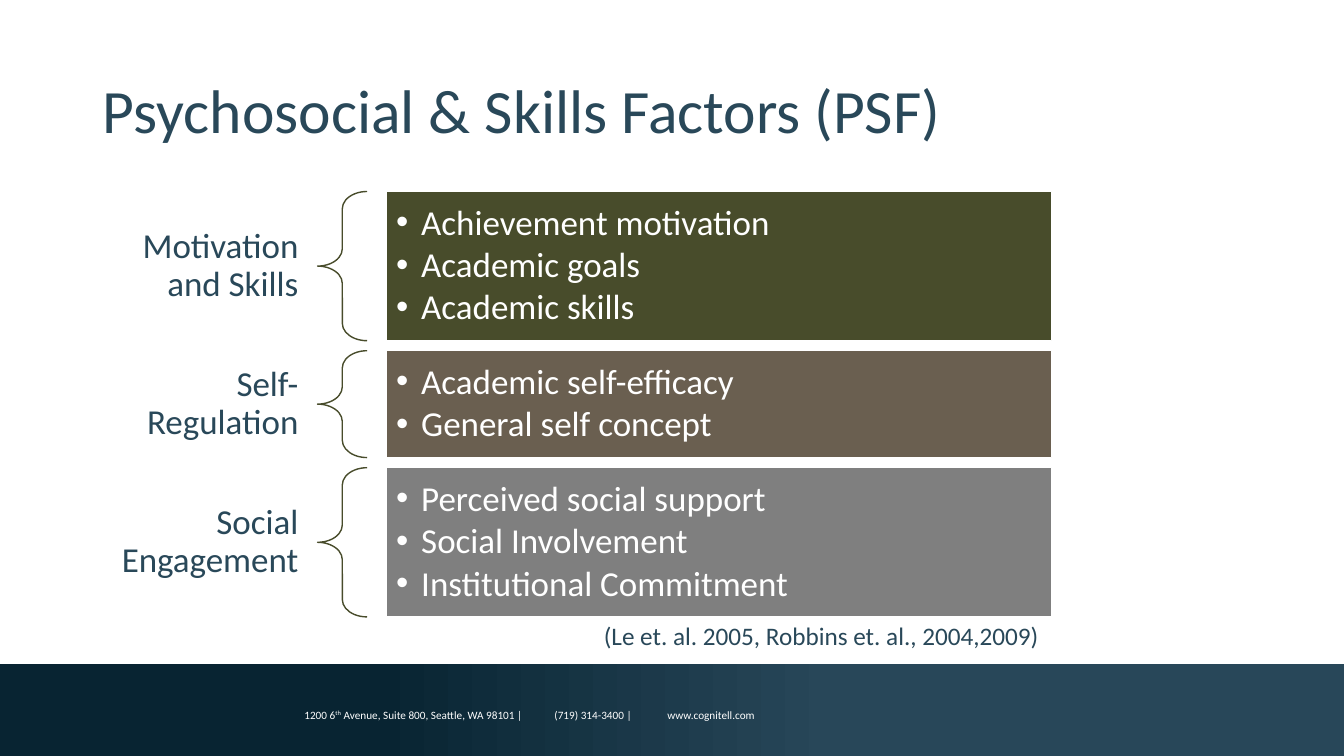
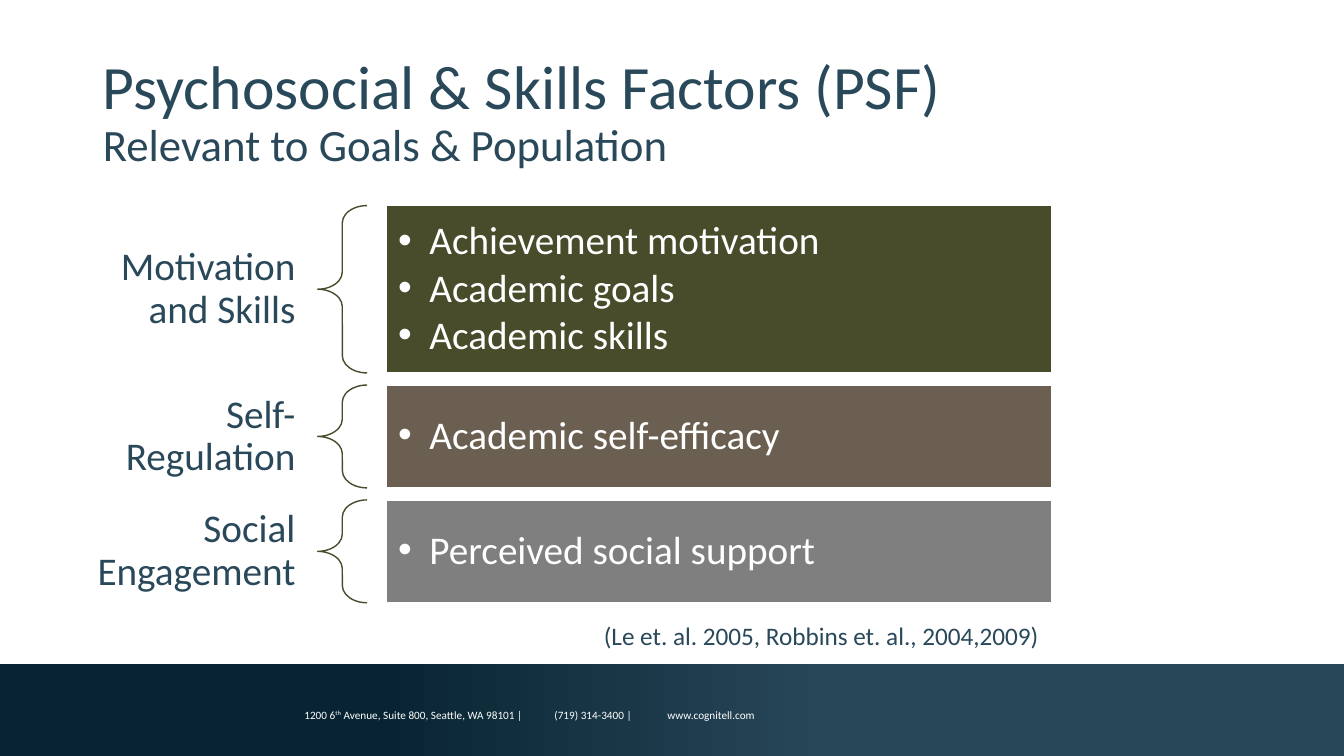
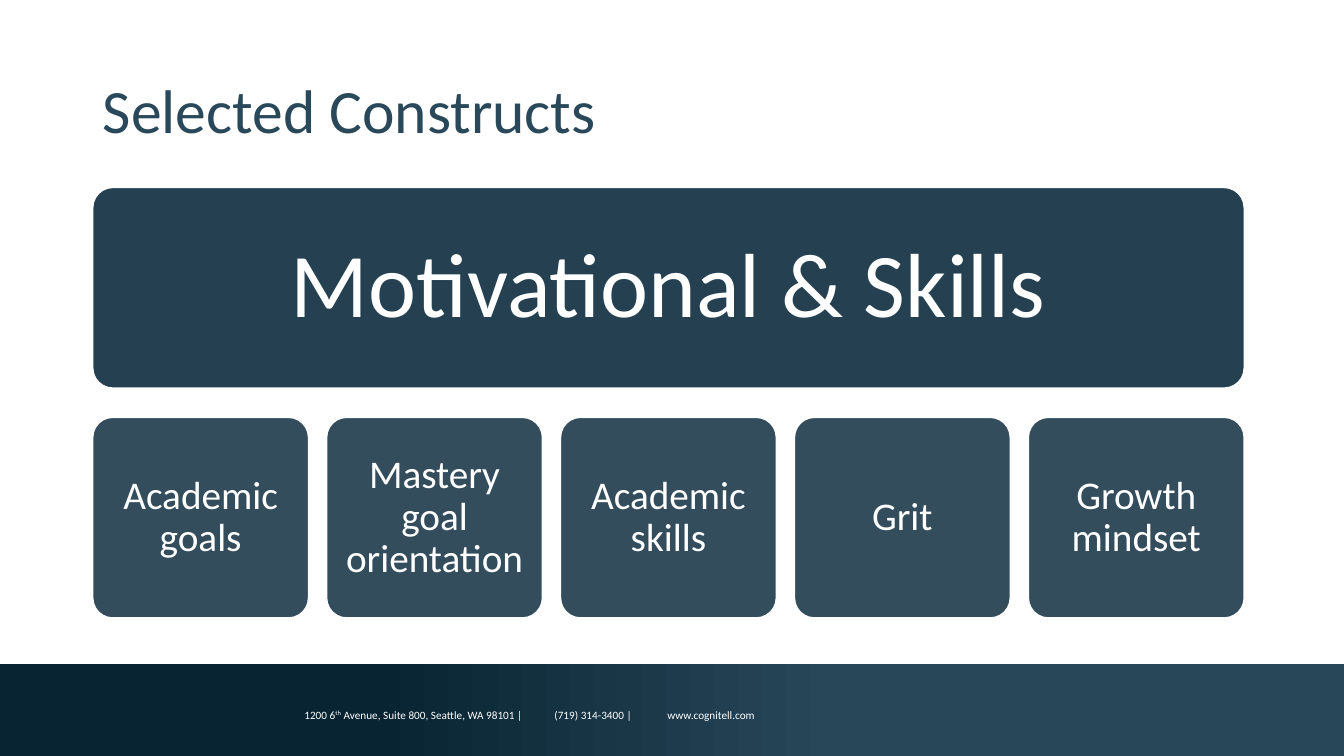
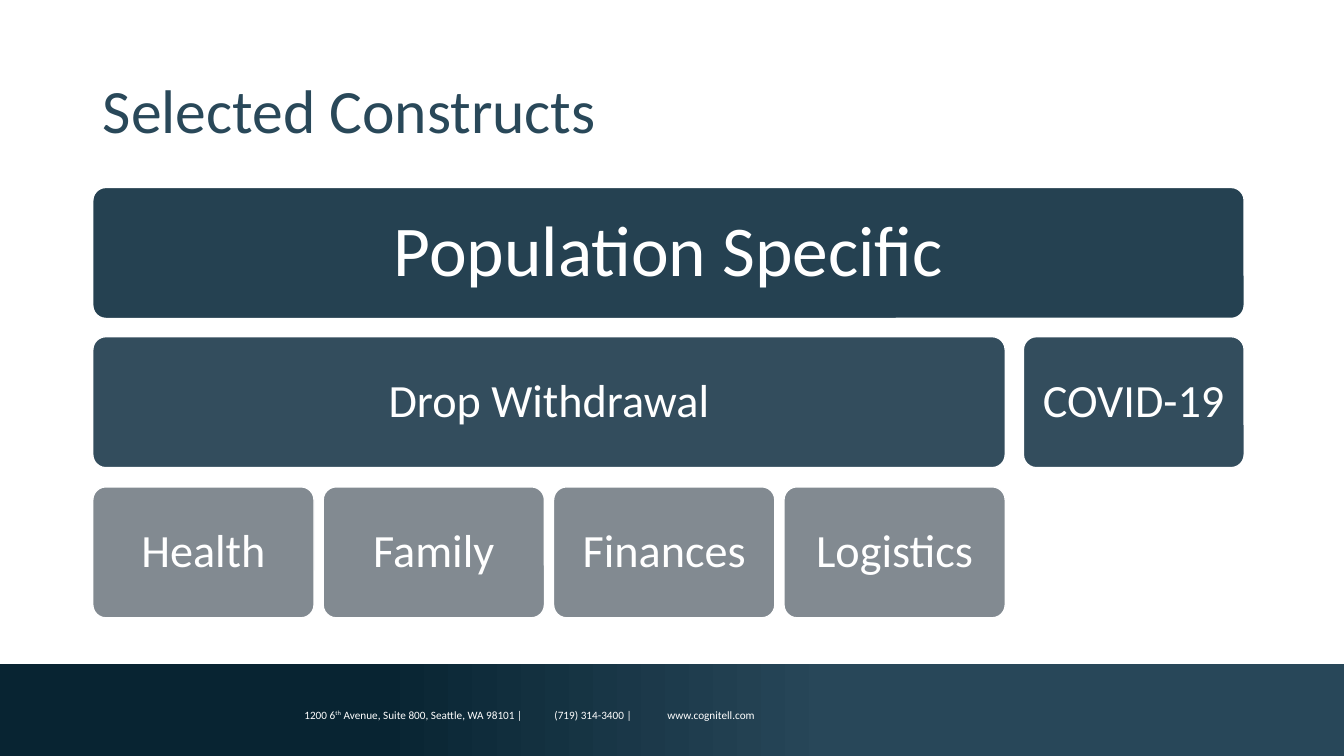
from dataclasses import dataclass

from lxml import etree
from pptx import Presentation
from pptx.dml.color import RGBColor
from pptx.enum.shapes import MSO_SHAPE
from pptx.enum.text import MSO_ANCHOR, MSO_AUTO_SIZE, PP_ALIGN
from pptx.oxml.ns import qn
from pptx.util import Pt

EMU_PER_PX = 9144  # 100 px to the inch
FONT = "Calibri"

WHITE, INK = "FFFFFF", "294859"
OLIVE, BROWN, GREY = "484C2B", "6A5F50", "7F7F7F"
BAND_DARK, BAND_LIGHT = "082432", "284759"
CARD_TOP, CARD_MIDDLE, CARD_LOW = "254151", "334D5D", "828A91"

LEFT, CENTER, RIGHT = PP_ALIGN.LEFT, PP_ALIGN.CENTER, PP_ALIGN.RIGHT
TOP, MIDDLE = MSO_ANCHOR.TOP, MSO_ANCHOR.MIDDLE
NO_AUTOSIZE = MSO_AUTO_SIZE.NONE
RECTANGLE, ROUNDED = MSO_SHAPE.RECTANGLE, MSO_SHAPE.ROUNDED_RECTANGLE
BRACE = MSO_SHAPE.LEFT_BRACE

CONTENT_LEFT, CONTENT_WIDTH = 92, 1142
CITATION = "(Le et. al. 2005, Robbins et. al., 2004,2009)"


@dataclass(frozen=True)
class Box:
    left: float
    top: float
    width: float
    height: float

    def emu(self) -> tuple[int, ...]:
        return tuple(px(v) for v in (self.left, self.top, self.width, self.height))


@dataclass(frozen=True)
class TextStyle:
    size: int
    color: str = WHITE
    align: PP_ALIGN = LEFT
    anchor: MSO_ANCHOR = MIDDLE
    inset_x: int = 10
    inset_y: int = 5
    line_spacing: float = 0.9


@dataclass(frozen=True)
class FactorGroup:
    label: str
    factors: list[str]
    fill: str
    height: int


@dataclass(frozen=True)
class FactorLayout:
    top: int
    gap: int
    bullet_indent: int
    label_style: TextStyle
    factor_style: TextStyle


def px(length: float) -> int:
    return round(length * EMU_PER_PX)


def rgb(color: str) -> RGBColor:
    return RGBColor.from_string(color)


def write_text(shape, lines: list[str], style: TextStyle) -> None:
    """Fill a shape with one paragraph per line, all in one style."""
    frame = shape.text_frame
    frame.text = "\n".join(lines)
    frame.word_wrap = True
    frame.auto_size = NO_AUTOSIZE
    frame.vertical_anchor = style.anchor
    frame.margin_left = frame.margin_right = px(style.inset_x)
    frame.margin_top = frame.margin_bottom = px(style.inset_y)
    for paragraph in frame.paragraphs:
        paragraph.alignment = style.align
        paragraph.line_spacing = style.line_spacing
        for run in paragraph.runs:
            run.font.name = FONT
            run.font.size = Pt(style.size)
            run.font.color.rgb = rgb(style.color)


def add_text(slide, box: Box, text: str, style: TextStyle):
    shape = slide.shapes.add_textbox(*box.emu())
    write_text(shape, [text], style)
    return shape


def add_shape(slide, kind: MSO_SHAPE, box: Box, fill: str | None, line: str | None):
    shape = slide.shapes.add_shape(kind, *box.emu())
    shape.shadow.inherit = False
    if fill:
        shape.fill.solid()
        shape.fill.fore_color.rgb = rgb(fill)
    else:
        shape.fill.background()
    if line:
        shape.line.color.rgb = rgb(line)
        shape.line.width = Pt(1)
    else:
        shape.line.fill.background()
    return shape


def add_bullets(shape, indent: int, spacing: float) -> None:
    for index, paragraph in enumerate(shape.text_frame.paragraphs):
        properties = paragraph._p.get_or_add_pPr()
        properties.set("marL", str(px(indent)))
        properties.set("indent", str(-px(indent)))
        etree.SubElement(properties, qn("a:buFont")).set("typeface", "Arial")
        etree.SubElement(properties, qn("a:buChar")).set("char", "•")
        if index:
            paragraph.space_before = Pt(spacing)


def add_footer(slide) -> None:
    band = add_shape(slide, RECTANGLE, Box(0, 659, 1333, 94), None, None)
    band.fill.gradient()
    band.fill.gradient_angle = 0
    stops = ((0.28, BAND_DARK), (0.62, BAND_LIGHT))
    for stop, (position, color) in zip(band.fill.gradient_stops, stops):
        stop.position = position
        stop.color.rgb = rgb(color)

    style = TextStyle(8, line_spacing=1.0)
    contact = add_text(slide, Box(292, 689, 472, 40), "1200 6", style)
    paragraph = contact.text_frame.paragraphs[0]
    tabs = etree.SubElement(paragraph._p.get_or_add_pPr(), qn("a:tabLst"))
    for position in (248, 360):
        tab = etree.SubElement(tabs, qn("a:tab"))
        tab.set("pos", str(px(position)))
        tab.set("algn", "l")
    ordinal = paragraph.add_run()
    ordinal.text = "th"
    ordinal._r.get_or_add_rPr().set("baseline", "30000")
    paragraph.add_run().text = (
        " Avenue, Suite 800, Seattle, WA 98101 |\t(719) 314-3400 |\twww.cognitell.com"
    )
    for run in paragraph.runs:
        run.font.name = FONT
        run.font.size = Pt(style.size)
        run.font.color.rgb = rgb(style.color)


def add_slide(presentation, title: str, subtitle: str = ""):
    slide = presentation.slides.add_slide(presentation.slide_layouts[5])
    add_footer(slide)
    shape = slide.shapes.title
    shape.left, shape.top, shape.width, shape.height = Box(92, 40, 1150, 145).emu()
    text = f"{title}\v{subtitle}" if subtitle else title
    write_text(shape, [text], TextStyle(44, INK))
    for run in shape.text_frame.paragraphs[0].runs[1:]:
        run.font.size = Pt(32)
    return slide


def add_factor_groups(slide, groups: list[FactorGroup], layout: FactorLayout) -> None:
    """Stack label, brace and bulleted panel for each group, then the citation."""
    top = layout.top
    for group in groups:
        add_text(slide, Box(72, top, 243, group.height), group.label, layout.label_style)
        brace = add_shape(slide, BRACE, Box(315, top, 49, group.height), None, OLIVE)
        brace.adjustments[0] = 0.35
        brace.adjustments[1] = 0.5
        panel = add_shape(
            slide, RECTANGLE, Box(383, top, 660, group.height), group.fill, WHITE
        )
        write_text(panel, group.factors, layout.factor_style)
        add_bullets(panel, layout.bullet_indent, 0.13 * layout.factor_style.size)
        top += group.height + layout.gap
    citation_style = TextStyle(18, INK, anchor=TOP, line_spacing=1.0)
    add_text(slide, Box(589, 611, 468, 40), CITATION, citation_style)


def add_card(slide, box: Box, text: str, fill: str, size: int, inset: int) -> None:
    card = add_shape(slide, ROUNDED, box, fill, WHITE)
    card.adjustments[0] = 0.1
    style = TextStyle(size, align=CENTER, inset_x=inset, inset_y=inset)
    write_text(card, [text], style)


def add_card_row(
    slide, area: Box, gap: int, labels: list[str], fill: str, size: int, inset: int
) -> None:
    """Split an area into equal cards with a fixed gap."""
    width = (area.width - gap * (len(labels) - 1)) / len(labels)
    for index, label in enumerate(labels):
        left = area.left + index * (width + gap)
        add_card(slide, Box(left, area.top, width, area.height), label, fill, size, inset)


def build_all_factors(presentation) -> None:
    slide = add_slide(presentation, "Psychosocial & Skills Factors (PSF)")
    groups = [
        FactorGroup(
            "Motivation and Skills",
            ["Achievement motivation", "Academic goals", "Academic skills"],
            OLIVE, 148,
        ),
        FactorGroup(
            "Self-Regulation", ["Academic self-efficacy", "General self concept"], BROWN, 106
        ),
        FactorGroup(
            "Social Engagement",
            ["Perceived social support", "Social Involvement", "Institutional Commitment"],
            GREY, 148,
        ),
    ]
    label_style = TextStyle(25, INK, RIGHT, inset_x=19, inset_y=7)
    factor_style = TextStyle(25, inset_y=10)
    add_factor_groups(slide, groups, FactorLayout(190, 10, 25, label_style, factor_style))


def build_relevant_factors(presentation) -> None:
    slide = add_slide(
        presentation, "Psychosocial & Skills Factors (PSF)", "Relevant to Goals & Population"
    )
    groups = [
        FactorGroup(
            "Motivation and Skills",
            ["Achievement motivation", "Academic goals", "Academic skills"],
            OLIVE, 166,
        ),
        FactorGroup("Self-Regulation", ["Academic self-efficacy"], BROWN, 102),
        FactorGroup("Social Engagement", ["Perceived social support"], GREY, 102),
    ]
    label_style = TextStyle(28, INK, RIGHT, inset_x=22, inset_y=8)
    factor_style = TextStyle(28, inset_x=12, inset_y=12)
    add_factor_groups(slide, groups, FactorLayout(204, 12, 31, label_style, factor_style))


def build_motivational_constructs(presentation) -> None:
    slide = add_slide(presentation, "Selected Constructs")
    heading = Box(CONTENT_LEFT, 186, CONTENT_WIDTH, 199)
    add_card(slide, heading, "Motivational & Skills", CARD_TOP, 65, 27)
    constructs = [
        "Academic goals", "Mastery goal orientation", "Academic skills", "Grit", "Growth mindset"
    ]
    area = Box(CONTENT_LEFT, 414, CONTENT_WIDTH, 199)
    add_card_row(slide, area, 18, constructs, CARD_MIDDLE, 28, 11)


def build_population_constructs(presentation) -> None:
    slide = add_slide(presentation, "Selected Constructs")
    height, withdrawal_width, covid_width = 130, 905, 219
    heading = Box(CONTENT_LEFT, 186, CONTENT_WIDTH, height)
    add_card(slide, heading, "Population Specific", CARD_TOP, 51, 21)
    withdrawal = Box(CONTENT_LEFT, 334, withdrawal_width, height)
    add_card(slide, withdrawal, "Drop Withdrawal", CARD_MIDDLE, 33, 14)
    covid_left = CONTENT_LEFT + CONTENT_WIDTH - covid_width
    covid = Box(covid_left, 334, covid_width, height)
    add_card(slide, covid, "COVID-19", CARD_MIDDLE, 33, 14)
    reasons = ["Health", "Family", "Finances", "Logistics"]
    area = Box(CONTENT_LEFT, 483, withdrawal_width, height)
    add_card_row(slide, area, 9, reasons, CARD_LOW, 33, 14)


def main() -> None:
    presentation = Presentation()
    presentation.slide_width, presentation.slide_height = px(1333), px(750)
    build_all_factors(presentation)
    build_relevant_factors(presentation)
    build_motivational_constructs(presentation)
    build_population_constructs(presentation)
    presentation.save("out.pptx")


if __name__ == "__main__":
    main()
